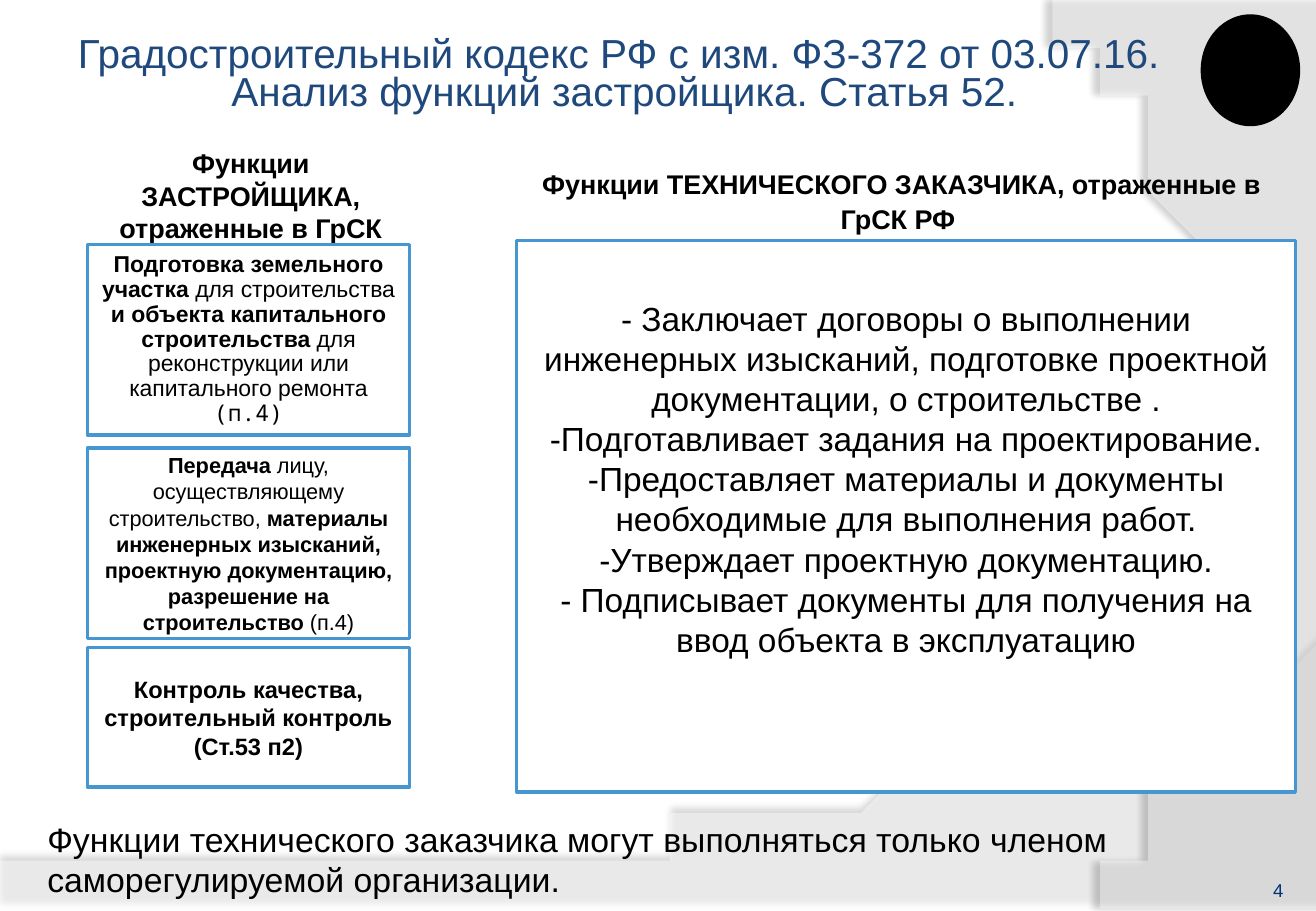
from lxml import etree
from pptx import Presentation
from pptx.dml.color import RGBColor
from pptx.enum.shapes import MSO_SHAPE
from pptx.enum.text import MSO_ANCHOR, PP_ALIGN
from pptx.oxml.ns import qn
from pptx.util import Cm, Pt

RECT, OVAL = MSO_SHAPE.RECTANGLE, MSO_SHAPE.OVAL
TOP, MIDDLE, BOTTOM = MSO_ANCHOR.TOP, MSO_ANCHOR.MIDDLE, MSO_ANCHOR.BOTTOM
LEFT, CENTER, RIGHT = PP_ALIGN.LEFT, PP_ALIGN.CENTER, PP_ALIGN.RIGHT
WHITE = RGBColor(0xFF, 0xFF, 0xFF)
BLACK = RGBColor(0x00, 0x00, 0x00)
NAVY = RGBColor(0x1F, 0x49, 0x7D)
NUMBER_BLUE = RGBColor(0x00, 0x32, 0x74)
BORDER_BLUE = RGBColor(0x45, 0x96, 0xD1)
FONT, MONO = "Arial", "Noto Sans Mono"
BOLD = {"bold": True}
BOX_INSETS = (0.2, 0.1, 0.2, 0.1)


def bezier(p0, p1, p2, p3, steps=40):
    """Return points along a cubic curve, without its start."""
    points = []
    for i in range(1, steps + 1):
        t = i / steps
        u = 1 - t
        weights = (u ** 3, 3 * u * u * t, 3 * u * t * t, t ** 3)
        points.append(tuple(sum(w * p[axis] for w, p in zip(weights, (p0, p1, p2, p3)))
                            for axis in (0, 1)))
    return points


class SlideBuilder:
    """Hold the style and the current slide."""

    def __init__(self, prs):
        """Add a title-only slide."""
        self.s = prs.slides.add_slide(prs.slide_layouts[5])

    def fill_text(self, shape, paragraphs, size, color=BLACK, align=CENTER, anchor=TOP,
                  insets=(0, 0, 0, 0), spacing=None):
        """Fill a shape with paragraphs made of (text, format) runs."""
        tf = shape.text_frame
        tf.word_wrap = True
        tf.vertical_anchor = anchor
        for side, inset in zip(("left", "top", "right", "bottom"), insets):
            setattr(tf, f"margin_{side}", Cm(inset))
        for i, runs in enumerate(paragraphs):
            p = tf.add_paragraph() if i else tf.paragraphs[0]
            p.alignment = align
            p.line_spacing = spacing
            for text, extra in runs:
                if text == "\n":
                    p.add_line_break()
                    continue
                r = p.add_run()
                r.text = text
                values = {"name": FONT, "size": Pt(size), "bold": False, **extra}
                for key, value in values.items():
                    setattr(r.font, key, value)
                r.font.color.rgb = color

    def title(self, place, runs, **style):
        """Place the title in front of the background."""
        sp = self.s.shapes.title
        sp.element.getparent().append(sp.element)
        sp.left, sp.top, sp.width, sp.height = map(Cm, place)
        self.fill_text(sp, [runs], **style)

    def text(self, place, runs, **style):
        """Add a text box with one paragraph."""
        sp = self.s.shapes.add_textbox(*map(Cm, place))
        self.fill_text(sp, [runs], **style)

    def shape(self, kind, place, fill, line=None):
        """Add a flat preset shape."""
        sp = self.s.shapes.add_shape(kind, *map(Cm, place))
        sp.shadow.inherit = False
        sp.fill.solid()
        sp.fill.fore_color.rgb = fill
        if line is None:
            sp.line.fill.background()
        else:
            sp.line.color.rgb = line
            sp.line.width = Pt(2)
        return sp

    def box(self, place, paragraphs, **style):
        """Add a bordered box with text."""
        sp = self.shape(RECT, place, WHITE, BORDER_BLUE)
        self.fill_text(sp, paragraphs, **{"insets": BOX_INSETS, "anchor": MIDDLE, **style})

    def wave(self, points, opacity, shade, distance, direction):
        """Add a translucent background wave with a soft shadow."""
        builder = self.s.shapes.build_freeform(*points[0], scale=Cm(1))
        builder.add_line_segments(points[1:], close=True)
        sp = builder.convert_to_shape()
        sp.shadow.inherit = False
        sp.line.fill.background()
        sp.fill.solid()
        sp.fill.fore_color.rgb = WHITE
        color = sp.element.spPr.find(".//" + qn("a:srgbClr"))
        etree.SubElement(color, qn("a:alpha"), val=str(opacity * 1000))
        effects = sp.element.spPr.find(qn("a:effectLst"))
        shadow = etree.SubElement(effects, qn("a:outerShdw"), blurRad=str(Pt(4)),
                                  dist=str(Pt(distance)), dir=str(direction * 60000),
                                  algn="ctr", rotWithShape="0")
        dark = etree.SubElement(shadow, qn("a:srgbClr"), val=str(BLACK))
        etree.SubElement(dark, qn("a:alpha"), val=str(shade * 1000))


def main():
    """Build the slide and save it."""
    prs = Presentation()
    prs.slide_width, prs.slide_height = Cm(27.51), Cm(19.05)
    b = SlideBuilder(prs)

    right, bottom = 27.51, 19.05
    crest = (right, 13.2)
    b.wave([(0, 17.9), (0, bottom), (right, bottom), crest]
           + bezier(crest, (15.4, 18.52), (10.74, 18.26), (0, 17.9)), 45, 35, 3.5, 270)
    foot = (22.6, bottom)
    b.wave([(right, 0.05), (right, bottom), foot]
           + bezier(foot, (25.7, 15.72), (28, 7.62), (22.02, 0)), 40, 45, 4, 180)
    b.shape(OVAL, (25.1, 0.3, 2.08, 2.34), BLACK)

    b.title((1.37, 0.76, 23.37, 1.65),
            [("Градостроительный кодекс РФ с изм. ФЗ-372 от 03.07.16. ", {}), ("\n", {}),
             ("Анализ функций застройщика. Статья 52.", {})],
            size=24, color=NAVY, anchor=MIDDLE, spacing=0.8)
    b.text((1.75, 2.92, 6.99, 2.18), [("Функции ЗАСТРОЙЩИКА, отраженные в ГрСК", BOLD)],
           size=16, insets=(0.28, 0.15, 0.28, 0.15))
    b.text((10.62, 3.43, 16.46, 0.86),
           [("Функции ТЕХНИЧЕСКОГО ЗАКАЗЧИКА, отраженные в ГрСК РФ ", BOLD)],
           size=16, spacing=1.1)

    customer_duties = (
        "- Заключает договоры о выполнении инженерных изысканий, подготовке проектной "
        "документации, о строительстве .",
        "-Подготавливает задания на проектирование.",
        "-Предоставляет материалы и документы необходимые для выполнения работ.",
        "-Утверждает проектную документацию.",
        "- Подписывает документы для получения на ввод объекта в эксплуатацию",
    )
    b.box((10.8, 5.03, 16.28, 11.53), [[(duty, {})] for duty in customer_duties],
          size=19.8, anchor=TOP, insets=(0.2, 1.2, 0.2, 0.1))

    developer_duties = (
        (5.11, 3.99, 13.6, 0.9, [
            ("Подготовка земельного участка ", BOLD), ("для строительства ", {}),
            ("и объекта капитального строительства ", BOLD),
            ("для реконструкции или капитального ремонта ", {}), ("(п.4)", {"name": MONO})]),
        (9.37, 3.99, 12.9, None, [
            ("Передача ", BOLD), ("лицу, осуществляющему строительство, ", {}),
            ("материалы инженерных изысканий, проектную документацию, "
             "разрешение на строительство ", BOLD), ("(п.4)", {})]),
        (13.54, 2.92, 14, None, [
            ("Контроль качества, строительный контроль (Ст.53 п2)", BOLD)]),
    )
    for top, height, size, spacing, runs in developer_duties:
        b.box((1.83, top, 6.73, height), [runs], size=size, spacing=spacing)

    b.text((0.74, 16.99, 26.34, 1.96),
           [("Функции технического заказчика могут выполняться только членом "
             "саморегулируемой организации.", {})],
           size=20, align=LEFT, insets=(0.25, 0.13, 0.25, 0.13))
    b.text((24.54, 17.83, 2.29, 1.02), [("4", {})], size=11, color=NUMBER_BLUE,
           align=RIGHT, anchor=BOTTOM)
    prs.save("out.pptx")


if __name__ == "__main__":
    main()
